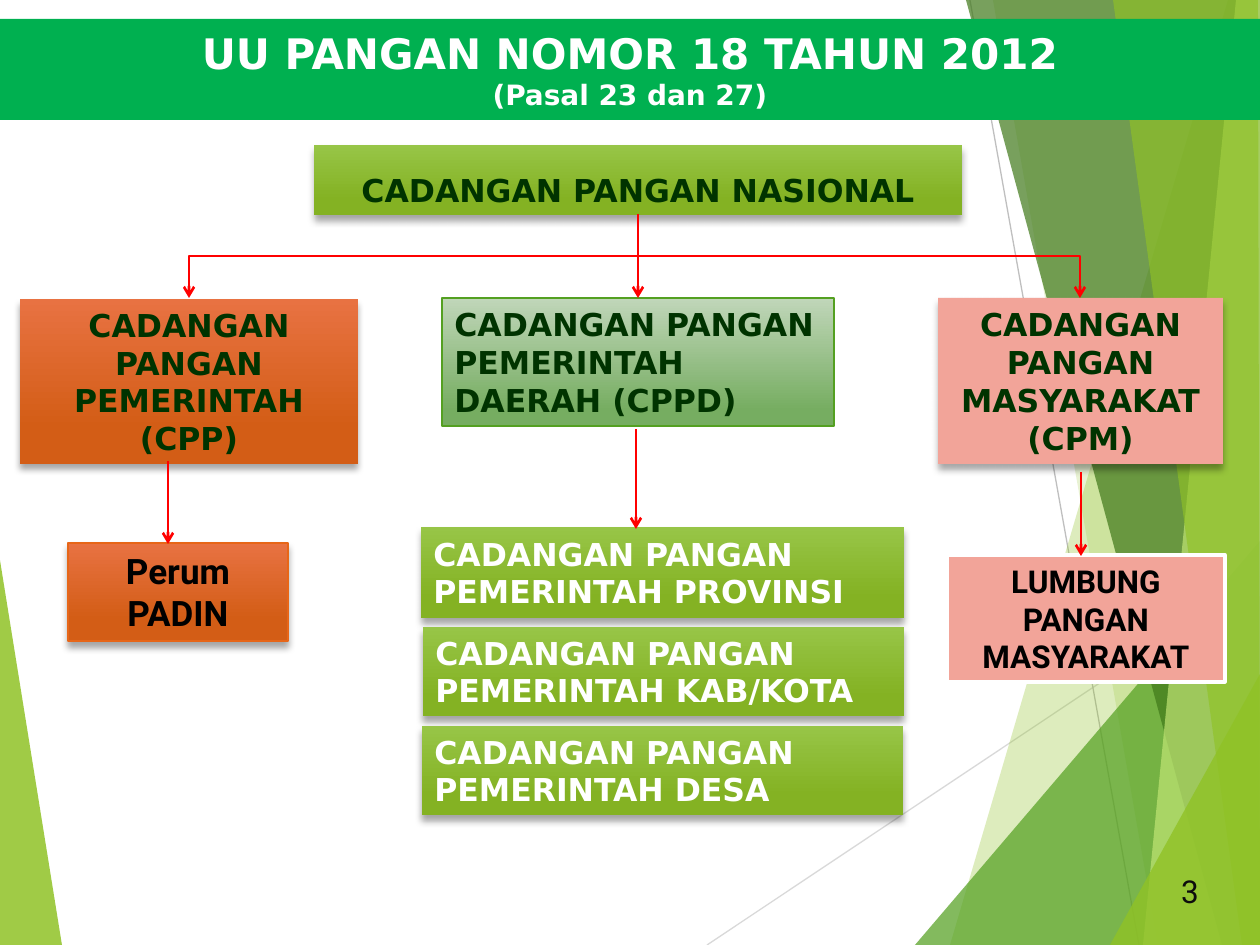
from lxml.etree import SubElement
from pptx import Presentation
from pptx.dml.color import RGBColor
from pptx.enum.shapes import MSO_CONNECTOR, MSO_SHAPE
from pptx.enum.text import MSO_ANCHOR, PP_ALIGN
from pptx.oxml.ns import qn
from pptx.util import Inches, Pt

THEME = {
    "green": ("97C547", "84B223", 0.78), "orange": ("E87242", "D35D16", 0.78),
    "sage": ("C0D6B9", "76AD61", 0.88), "pink": "F2A499", "banner": "00B050",
    "dark": "003300", "white": "FFFFFF", "black": "000000", "number": "0D0D0D",
    "arrow": "FF0000", "sage_line": "54A021", "orange_line": "E76618",
    "head": "DejaVu Sans", "body": "Roboto",
    "title": 24, "subtitle": 16, "label": 18, "agency": 20,
}
T = THEME
SCALE = Inches(1) / 126
W, H = 1260, 945


def px(*lengths):
    return [round(v * SCALE) for v in lengths]


def box(at, text, fill, color=T["dark"], font=T["head"], size=T["label"],
        align=PP_ALIGN.CENTER, line=None, shadow=True):
    """Add a text panel; fill is None, one colour or a gradient."""
    if fill is None:
        sp = s.shapes.add_textbox(*px(*at))
    else:
        sp = s.shapes.add_shape(MSO_SHAPE.RECTANGLE, *px(*at))
        sp.shadow.inherit = False
        if isinstance(fill, tuple):
            sp.fill.gradient()
            sp.fill.gradient_angle = 270
            first, last = sp.fill.gradient_stops
            first.color.rgb = RGBColor.from_string(fill[0])
            last.color.rgb = RGBColor.from_string(fill[1])
            first.position, last.position = 0, fill[2]
        else:
            sp.fill.solid()
            sp.fill.fore_color.rgb = RGBColor.from_string(fill)
        if line:
            sp.line.color.rgb = RGBColor.from_string(line[0])
            sp.line.width = Pt(line[1])
        else:
            sp.line.fill.background()
        if shadow:
            effects = sp._element.spPr.find(qn("a:effectLst"))
            outer = SubElement(effects, qn("a:outerShdw"), blurRad=str(Pt(4)),
                               dist=str(Pt(3)), dir="5400000", rotWithShape="0")
            clr = SubElement(outer, qn("a:srgbClr"), val=T["black"])
            SubElement(clr, qn("a:alpha"), val="35000")
    tf = sp.text_frame
    tf.word_wrap = True
    tf.vertical_anchor = MSO_ANCHOR.MIDDLE
    p = tf.paragraphs[0]
    p.alignment = align
    p.font.name, p.font.size, p.font.bold = font, Pt(size), fill is not None
    p.font.color.rgb = RGBColor.from_string(color)
    p.add_run().text = text
    return p


prs = Presentation()
prs.slide_width, prs.slide_height = px(W, H)
s = prs.slides.add_slide(prs.slide_layouts[6])

# Backdrop: two points make a thin line, more make a translucent facet
backdrop = [
    ("90C226", 85, [(0, 560), (62, H), (0, H)]),
    ("D9D9D9", 100, [(707, H), (W, 576)]),
    ("BFBFBF", 100, [(970, 0), (1139, H)]),
    ("90C226", 30, [(1228, 0), (950, H), (W, H), (W, 0)]),
    ("90C226", 20, [(993, 0), (1158, H), (W, H), (W, 0)]),
    ("54A021", 72, [(915, H), (W, 541), (W, H)]),
    ("3F7819", 70, [(966, 0), (1222, H), (W, H), (W, 0)]),
    ("C0E474", 70, [(1236, 0), (1143, H), (W, H), (W, 0)]),
    ("90C226", 65, [(1113, 0), (1242, H), (W, H), (1258, 0)]),
    ("90C226", 80, [(1110, H), (W, 674), (W, H)]),
]
for color, opacity, points in backdrop:
    if len(points) == 2:
        sp = s.shapes.add_connector(MSO_CONNECTOR.STRAIGHT, *px(*points[0], *points[1]))
        SubElement(sp._element.spPr, qn("a:effectLst"))
        sp.line.color.rgb = RGBColor.from_string(color)
        sp.line.width = Pt(0.75)
        continue
    builder = s.shapes.build_freeform(*px(*points[0]))
    builder.add_line_segments([px(*pt) for pt in points[1:]], close=True)
    sp = builder.convert_to_shape()
    sp.shadow.inherit = False
    sp.fill.solid()
    sp.fill.fore_color.rgb = RGBColor.from_string(color)
    clr = sp._element.spPr.find(qn("a:solidFill")).find(qn("a:srgbClr"))
    SubElement(clr, qn("a:alpha"), val=str(opacity * 1000))
    sp.line.fill.background()

# Title banner
p = box((0, 19, W, 101), "UU PANGAN NOMOR 18 TAHUN 2012", T["banner"],
        color=T["white"], size=T["title"], shadow=False)
p.add_line_break()
r = p.add_run()
r.text = "(Pasal 23 dan 27)"
r.font.size = Pt(T["subtitle"])

# National reserve and its three branches
p = box((314, 145, 648, 70), "CADANGAN PANGAN NASIONAL", T["green"])
p.line_spacing = 1.5
box((938, 298, 285, 166), "CADANGAN PANGAN MASYARAKAT (CPM)", T["pink"])
box((20, 299, 338, 165), "CADANGAN PANGAN PEMERINTAH (CPP)", T["orange"])
box((442, 298, 392, 128), "CADANGAN PANGAN PEMERINTAH DAERAH (CPPD)", T["sage"],
    align=PP_ALIGN.LEFT, line=(T["sage_line"], 1), shadow=False)

# Regional levels
regions = [((421, 527, 483, 91), "PROVINSI"), ((423, 627, 481, 89), "KAB/KOTA"),
           ((422, 726, 481, 89), "DESA")]
for at, level in regions:
    box(at, f"CADANGAN PANGAN PEMERINTAH {level}", T["green"],
        color=T["white"], align=PP_ALIGN.LEFT)

# Managing bodies and slide number
box((68, 543, 220, 98), "Perum PADIN", T["orange"], color=T["black"],
    font=T["body"], size=T["agency"], line=(T["orange_line"], 1))
box((947, 555, 278, 127), "LUMBUNG PANGAN MASYARAKAT", T["pink"], color=T["black"],
    font=T["body"], line=(T["white"], 2), shadow=False)
box((1155, 866, 70, 50), "3", None, color=T["number"], font=T["body"])

# Arrows: elbows are turned a quarter so that they leave downwards
arrows = [(638, 214, 1080, 298), (638, 214, 638, 298), (638, 214, 189, 298),
          (168, 461, 168, 544), (636, 429, 636, 529), (1081, 472, 1081, 556)]
for x1, y1, x2, y2 in arrows:
    if x1 == x2:
        sp = s.shapes.add_connector(MSO_CONNECTOR.STRAIGHT, *px(x1, y1, x2, y2))
    else:
        cx, cy = (x1 + x2) / 2, (y1 + y2) / 2
        dx, dy = abs(x2 - x1) / 2, (y2 - y1) / 2
        side = 1 if x2 > x1 else -1
        sp = s.shapes.add_connector(MSO_CONNECTOR.ELBOW, *px(
            cx + side * dy, cy - dx, cx - side * dy, cy + dx))
        sp._element.spPr.find(qn("a:xfrm")).set("rot", str((180 + side * 90) * 60000))
    sp.line.color.rgb = RGBColor.from_string(T["arrow"])
    sp.line.width = Pt(1.5)
    SubElement(sp.line._get_or_add_ln(), qn("a:tailEnd"), type="arrow")
    SubElement(sp._element.spPr, qn("a:effectLst"))

prs.save("out.pptx")
